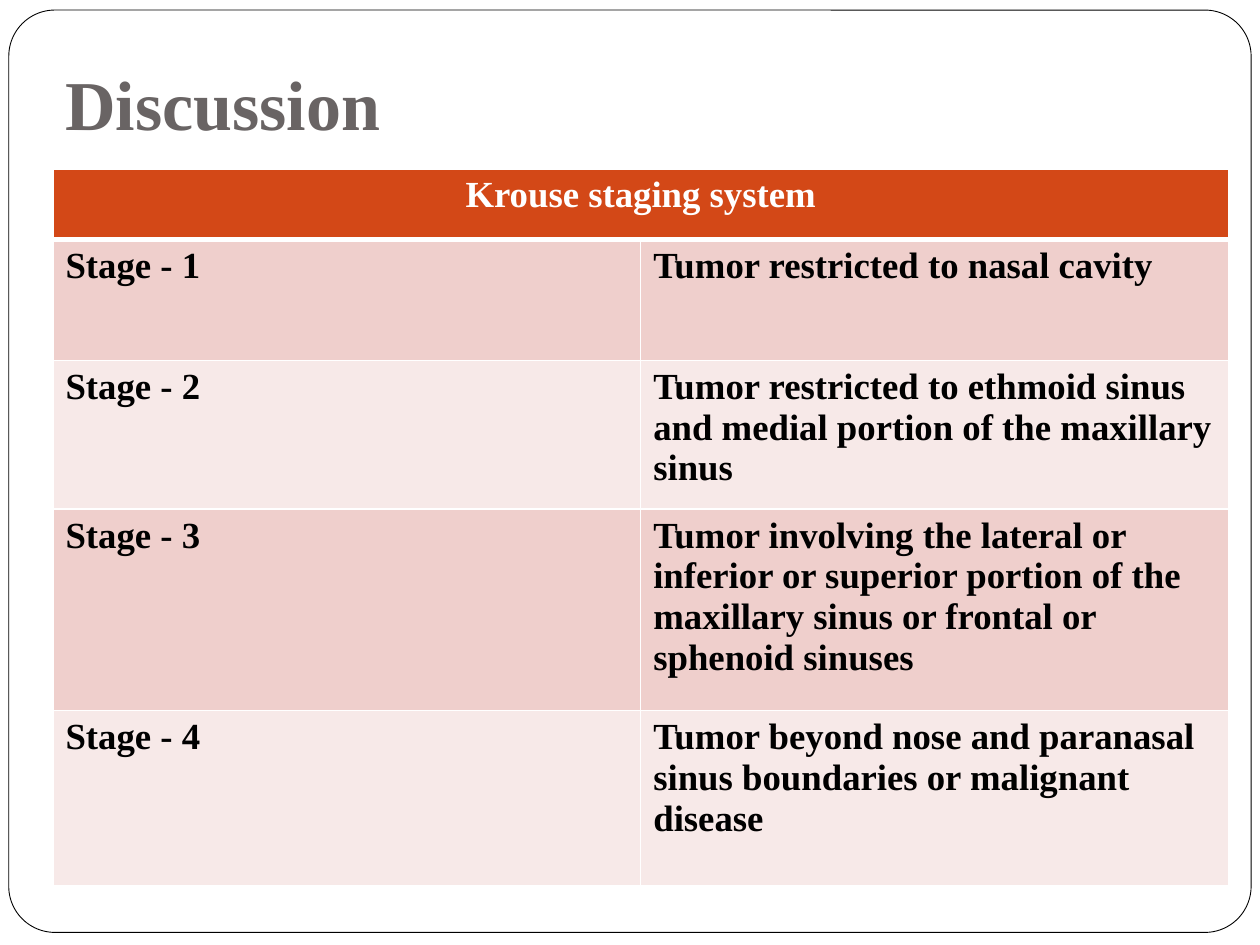
"""Build the slide that lists the stages of the Krouse system."""
from dataclasses import dataclass

from lxml import etree
from pptx import Presentation
from pptx.dml.color import RGBColor
from pptx.enum.shapes import MSO_SHAPE
from pptx.enum.text import MSO_ANCHOR, PP_ALIGN
from pptx.oxml.ns import qn
from pptx.util import Inches, Pt

ROUND = MSO_SHAPE.ROUNDED_RECTANGLE
LEFT, MID = PP_ALIGN.LEFT, PP_ALIGN.CENTER
LOW = MSO_ANCHOR.BOTTOM
FONT = "Times New Roman"
WIDE, HIGH = 10, 7.5
COLORS = {
    "white": "FFFFFF",
    "black": "000000",
    "title": "696464",
    "head": "D34817",
    "dark": "EFCFCC",
    "light": "F7E9E8",
}


@dataclass
class Box:
    left: float
    top: float
    width: float
    height: float

    def place(self) -> tuple:
        return tuple(Inches(v) for v in (self.left, self.top, self.width, self.height))


@dataclass
class Stage:
    name: str
    text: str
    height: float


PANEL = Box(0.07, 0.08, 9.86, 7.32)
TITLE = Box(0.42, 0, 9, 1.25)
GRID = Box(0.42, 1.34, 9.33, 5.69)
HEAD = 0.56
STAGES = [
    Stage("Stage - 1", "Tumor restricted to nasal cavity", 0.96),
    Stage("Stage - 2", "Tumor restricted to ethmoid sinus and medial portion "
          "of the maxillary sinus", 1.18),
    Stage("Stage - 3", "Tumor involving the lateral or inferior or superior portion "
          "of the maxillary sinus or frontal or sphenoid sinuses", 1.6),
    Stage("Stage - 4", "Tumor beyond nose and paranasal sinus boundaries "
          "or malignant disease", 1.39),
]


def shade(name: str) -> RGBColor:
    return RGBColor.from_string(COLORS[name])


def write(frame, text: str, *, size: float = 21, color: str = "black", align=LEFT) -> None:
    para = frame.paragraphs[0]
    para.alignment = align
    run = para.add_run()
    run.text = text
    run.font.name = FONT
    run.font.size = Pt(size)
    run.font.bold = True
    run.font.color.rgb = shade(color)


def edge(cell, base: float = 1) -> None:
    props = cell._tc.get_or_add_tcPr()
    widths = {"lnL": 1, "lnR": 1, "lnT": 1, "lnB": base}
    for spot, (tag, width) in enumerate(widths.items()):
        line = etree.Element(qn(f"a:{tag}"), w=str(Pt(width)))
        fill = etree.SubElement(line, qn("a:solidFill"))
        etree.SubElement(fill, qn("a:srgbClr"), val=COLORS["white"])
        props.insert(spot, line)


def paint(cell, color: str, base: float = 1) -> None:
    cell.fill.solid()
    cell.fill.fore_color.rgb = shade(color)
    edge(cell, base)


def add_panel(slide) -> None:
    panel = slide.shapes.add_shape(ROUND, *PANEL.place())
    panel.adjustments[0] = 0.05
    panel.shadow.inherit = False
    panel.fill.solid()
    panel.fill.fore_color.rgb = shade("white")
    panel.line.color.rgb = shade("black")
    panel.line.width = Pt(0.5)
    slide.shapes._spTree.insert(2, panel._element)


def add_title(slide) -> None:
    title = slide.shapes.title
    title.left, title.top, title.width, title.height = TITLE.place()
    frame = title.text_frame
    frame.vertical_anchor = LOW
    frame.margin_bottom = Inches(0.1)
    write(frame, "Discussion", size=40, color="title")


def add_grid(slide) -> None:
    table = slide.shapes.add_table(len(STAGES) + 1, 2, *GRID.place()).table
    table.rows[0].height = Inches(HEAD)
    for cell in table.rows[0].cells:
        paint(cell, "head", base=3)
    table.cell(0, 0).merge(table.cell(0, 1))
    write(table.cell(0, 0).text_frame, "Krouse staging system", color="white", align=MID)
    for num, stage in enumerate(STAGES, 1):
        row = table.rows[num]
        row.height = Inches(stage.height)
        for cell, text in zip(row.cells, (stage.name, stage.text)):
            paint(cell, "dark" if num % 2 else "light")
            write(cell.text_frame, text)


def main() -> None:
    deck = Presentation()
    deck.slide_width, deck.slide_height = Inches(WIDE), Inches(HIGH)
    slide = deck.slides.add_slide(deck.slide_layouts[5])
    add_panel(slide)
    add_title(slide)
    add_grid(slide)
    deck.save("out.pptx")


if __name__ == "__main__":
    main()
